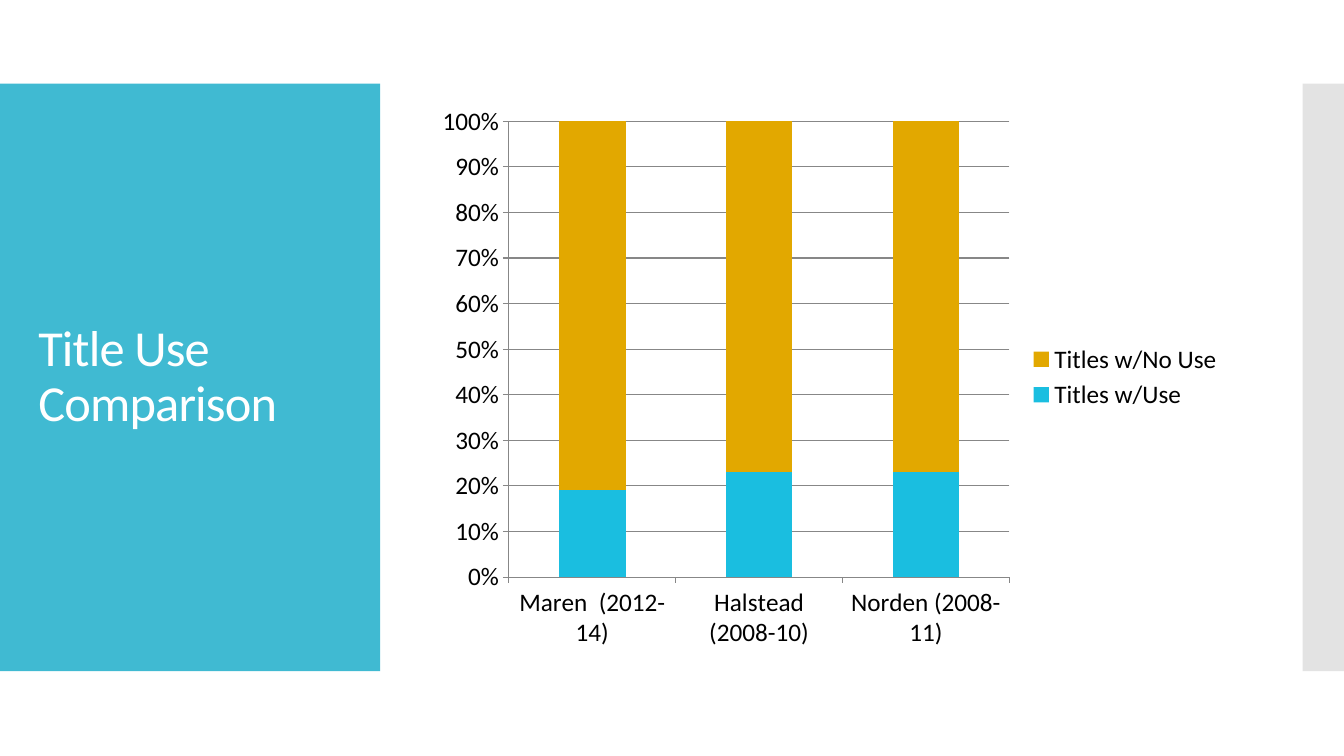
from pptx import Presentation
from pptx.chart.data import CategoryChartData
from pptx.dml.color import RGBColor
from pptx.enum.chart import XL_CHART_TYPE, XL_LEGEND_POSITION, XL_TICK_MARK
from pptx.enum.shapes import MSO_SHAPE
from pptx.enum.text import MSO_ANCHOR, MSO_AUTO_SIZE, PP_ALIGN
from pptx.util import Inches, Pt

STACKED = XL_CHART_TYPE.COLUMN_STACKED_100
RIGHT = XL_LEGEND_POSITION.RIGHT
OUTSIDE, NO_TICK = XL_TICK_MARK.OUTSIDE, XL_TICK_MARK.NONE
RECT = MSO_SHAPE.RECTANGLE
MIDDLE, NO_FIT, LEFT = MSO_ANCHOR.MIDDLE, MSO_AUTO_SIZE.NONE, PP_ALIGN.LEFT

FONT = "Calibri"
GRAY = "878787"
WIDTH, HEIGHT = 13.33, 7.5
TITLE = "Title Use Comparison"
TITLE_BOX = (0.28, 1.23, 3.22, 5.03)
CHART_BOX = (4.23, 0.94, 8, 5.6)
BAND_TOP, BAND_HEIGHT = 0.83, 5.83
BANDS = [(0, 3.77, "40BAD2"), (12.92, WIDTH - 12.92, "E3E3E3")]
GROUPS = ["Maren  (2012-14)", "Halstead (2008-10)", "Norden (2008-11)"]
SERIES = [
    ("Titles w/Use", (19, 23, 23), "1ABEE0"),
    ("Titles w/No Use", (81, 77, 77), "E2A800"),
]


def color(code):
    return RGBColor.from_string(code)


def paint(fill, code):
    fill.solid()
    fill.fore_color.rgb = color(code)


def style(font, size, code):
    font.name = FONT
    font.size = Pt(size)
    font.bold = False
    font.color.rgb = color(code)


def write(shape, text, size=18, code="000000", spacing=1.0, track=0):
    frame = shape.text_frame
    frame.word_wrap = True
    frame.auto_size = NO_FIT
    frame.vertical_anchor = MIDDLE
    line = frame.paragraphs[0]
    line.alignment = LEFT
    line.line_spacing = spacing
    run = line.add_run()
    run.text = text
    style(run.font, size, code)
    run.font._element.set("spc", str(track))


def add_band(slide, left, width, code):
    band = slide.shapes.add_shape(
        RECT, *map(Inches, (left, BAND_TOP, width, BAND_HEIGHT)))
    band.shadow.inherit = False
    paint(band.fill, code)
    band.line.fill.background()


def add_bars(slide):
    data = CategoryChartData()
    data.categories = GROUPS
    for name, values, _ in SERIES:
        data.add_series(name, values)
    chart = slide.shapes.add_chart(STACKED, *map(Inches, CHART_BOX), data).chart
    chart.has_title = False
    style(chart.font, 18, "000000")
    chart.has_legend = True
    chart.legend.position = RIGHT
    chart.legend.include_in_layout = False
    plot = chart.plots[0]
    plot.gap_width = 150
    plot.overlap = 100
    plot.vary_by_categories = False
    for series, (_, _, code) in zip(plot.series, SERIES):
        paint(series.format.fill, code)
        series.invert_if_negative = False
    for axis in (chart.category_axis, chart.value_axis):
        axis.major_tick_mark = OUTSIDE
        axis.minor_tick_mark = NO_TICK
        axis.format.line.color.rgb = color(GRAY)
    scale = chart.value_axis
    scale.has_major_gridlines = True
    scale.major_gridlines.format.line.color.rgb = color(GRAY)
    scale.minimum_scale, scale.maximum_scale, scale.major_unit = 0, 1, 0.1
    scale.tick_labels.number_format = "0%"
    scale.tick_labels.number_format_is_linked = False


def main():
    deck = Presentation()
    deck.slide_width, deck.slide_height = Inches(WIDTH), Inches(HEIGHT)
    slide = deck.slides.add_slide(deck.slide_layouts[5])
    for band in BANDS:
        add_band(slide, *band)
    title = slide.shapes.title
    title.left, title.top, title.width, title.height = map(Inches, TITLE_BOX)
    write(title, TITLE, size=36, code="FFFFFF", spacing=0.9, track=-60)
    slide.shapes._spTree.append(title._element)
    add_bars(slide)
    deck.save("out.pptx")


if __name__ == "__main__":
    main()
